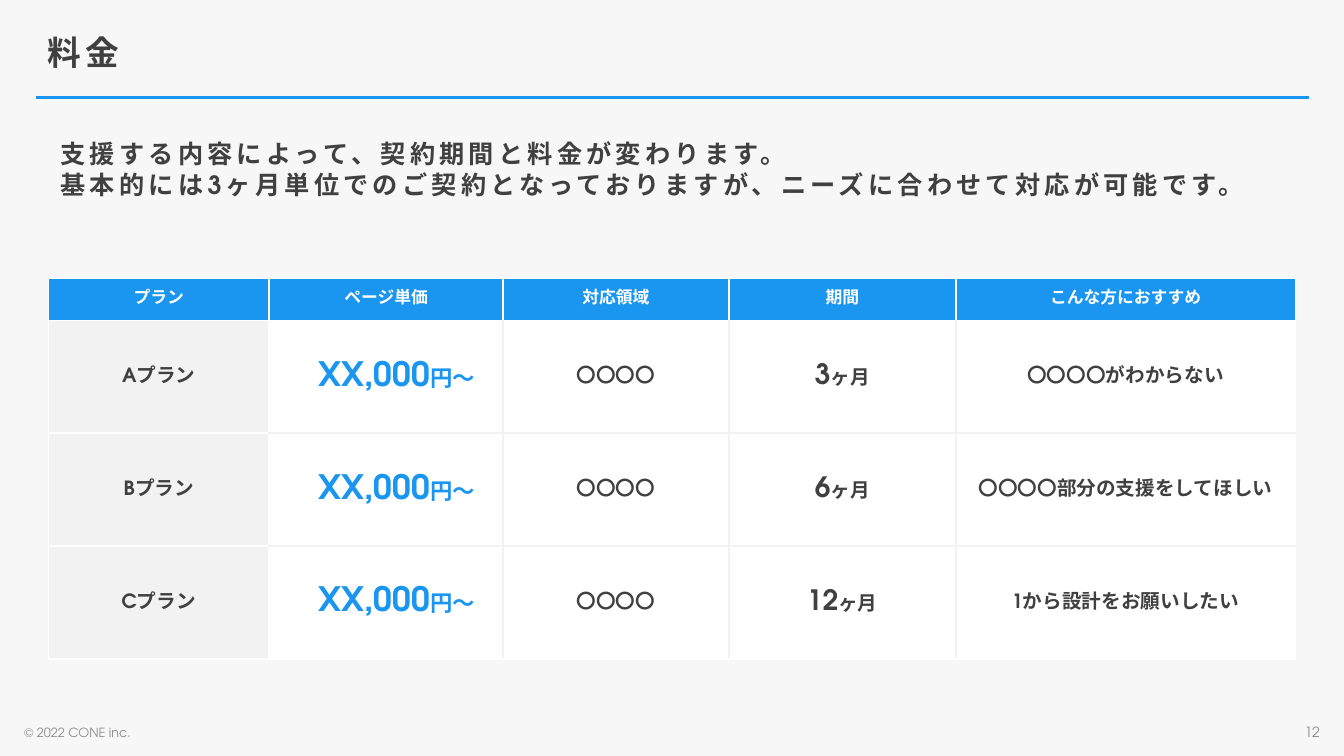
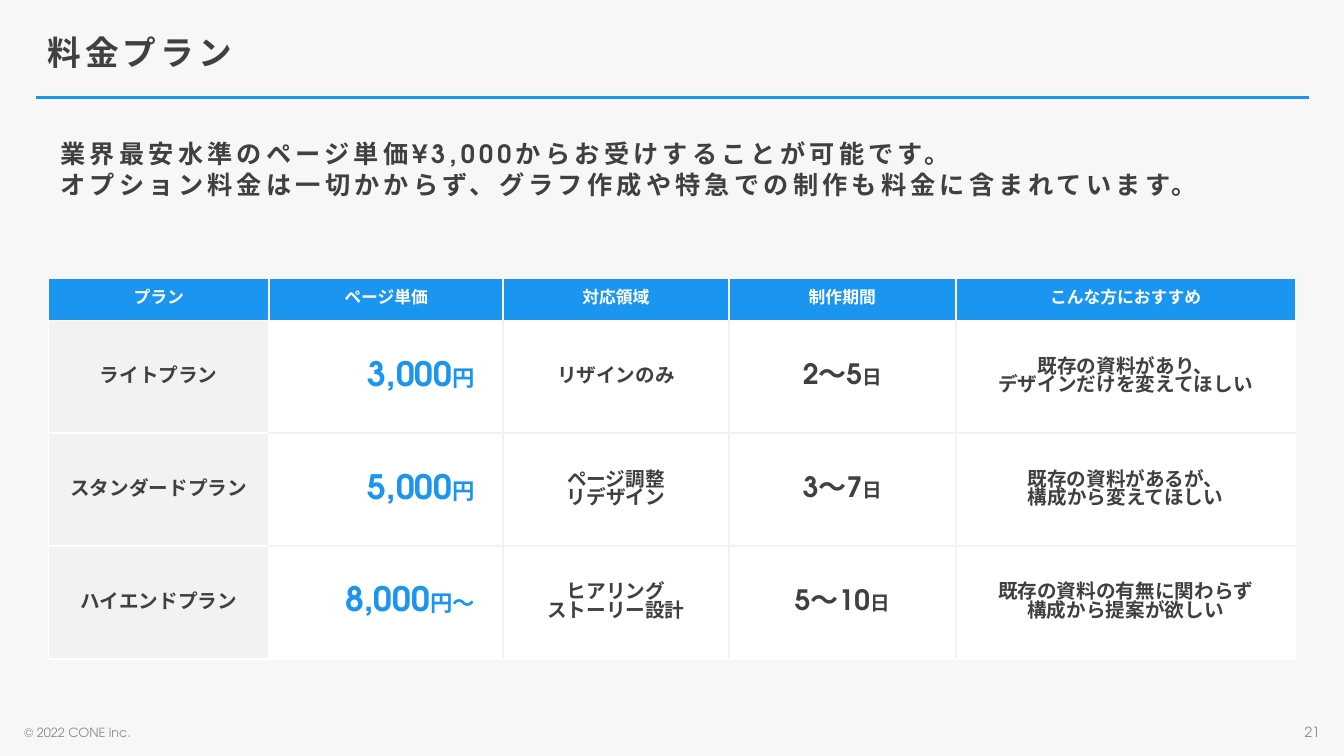
from lxml.etree import SubElement
from pptx import Presentation
from pptx.dml.color import RGBColor
from pptx.enum.lang import MSO_LANGUAGE_ID
from pptx.enum.shapes import MSO_CONNECTOR
from pptx.enum.text import MSO_ANCHOR, MSO_AUTO_SIZE, PP_ALIGN
from pptx.oxml.ns import qn
from pptx.util import Inches, Pt

SLIDES = [
    {
        "title": "料金",
        "number": "12",
        "lead": ["支援する内容によって、契約期間と料金が変わります。",
                 "基本的には3ヶ月単位でのご契約となっておりますが、ニーズに合わせて対応が可能です。"],
        "header": ["プラン", "ページ単価", "対応領域", "期間", "こんな方におすすめ"],
        "plans": [
            ("Aプラン", ("XX,000", "円〜"), ["〇〇〇〇"], ("3", "ヶ月"), ["〇〇〇〇がわからない"]),
            ("Bプラン", ("XX,000", "円〜"), ["〇〇〇〇"], ("6", "ヶ月"), ["〇〇〇〇部分の支援をしてほしい"]),
            ("Cプラン", ("XX,000", "円〜"), ["〇〇〇〇"], ("12", "ヶ月"), ["1から設計をお願いしたい"]),
        ],
    },
    {
        "title": "料金プラン",
        "number": "21",
        "lead": ["業界最安水準のページ単価¥3,000からお受けすることが可能です。",
                 "オプション料金は一切かからず、グラフ作成や特急での制作も料金に含まれています。"],
        "header": ["プラン", "ページ単価", "対応領域", "制作期間", "こんな方におすすめ"],
        "plans": [
            ("ライトプラン", ("3,000", "円"), ["リザインのみ"], ("2〜5", "日"),
             ["既存の資料があり、", "デザインだけを変えてほしい"]),
            ("スタンダードプラン", ("5,000", "円"), ["ページ調整", "リデザイン"], ("3〜7", "日"),
             ["既存の資料があるが、", "構成から変えてほしい"]),
            ("ハイエンドプラン", ("8,000", "円〜"), ["ヒアリング", "ストーリー設計"], ("5〜10", "日"),
             ["既存の資料の有無に関わらず", "構成から提案が欲しい"]),
        ],
    },
]
COPYRIGHT = "© 2022 CONE inc."

FONT = "TeX Gyre Adventor"
BLUE = RGBColor(0x1A, 0x96, 0xF0)
DARK = RGBColor(0x40, 0x40, 0x40)
GRAY = RGBColor(0x8C, 0x8C, 0x8C)
PALE = RGBColor(0xF2, 0xF2, 0xF2)
WHITE = RGBColor(0xFF, 0xFF, 0xFF)
BACKGROUND = RGBColor(0xF7, 0xF7, 0xF7)

COLUMN_WIDTHS = [2.19, 2.32, 2.24, 2.25, 3.37]
ROW_HEIGHTS = [0.42, 1.12, 1.12, 1.12]
BORDER_WIDTH = Pt(1.5)


def add_run(paragraph, text, size, color, bold=True, spacing=0):
    run = paragraph.add_run()
    run.text = text
    font = run.font
    font.name, font.size, font.bold = FONT, Pt(size), bold
    font.color.rgb = color
    font.language_id = MSO_LANGUAGE_ID.JAPANESE
    properties = run._r.get_or_add_rPr()
    SubElement(properties, qn("a:ea")).set("typeface", FONT)
    if spacing:
        properties.set("spc", str(spacing * 100))


def add_paragraphs(frame, paragraphs, alignment):
    for index, runs in enumerate(paragraphs):
        paragraph = frame.add_paragraph() if index else frame.paragraphs[0]
        paragraph.alignment = alignment
        for text, size, color in runs:
            add_run(paragraph, text, size, color)


def place(shape, left, top, width, height):
    shape.left, shape.top = Inches(left), Inches(top)
    shape.width, shape.height = Inches(width), Inches(height)


def prepare_frame(shape, anchor, top_inset):
    frame = shape.text_frame
    frame.auto_size = MSO_AUTO_SIZE.NONE
    frame.word_wrap = True
    frame.vertical_anchor = anchor
    frame.margin_top = Inches(top_inset)
    return frame


def add_title(slide, text):
    title = slide.shapes.title
    place(title, 0.37, 0.21, 12.52, 0.63)
    paragraph = prepare_frame(title, MSO_ANCHOR.MIDDLE, 0.08).paragraphs[0]
    paragraph.alignment = PP_ALIGN.LEFT
    paragraph.line_spacing = 0.9
    add_run(paragraph, text, 24, DARK, spacing=3)
    rule = slide.shapes.add_connector(
        MSO_CONNECTOR.STRAIGHT, Inches(0.36), Inches(0.97), Inches(12.98), Inches(0.97))
    rule.line.color.rgb = BLUE
    rule.line.width = Pt(2)
    SubElement(rule._element.spPr, qn("a:effectLst"))


def add_lead(slide, lines):
    body = slide.placeholders[1]
    place(body, 0.5, 1.27, 12.33, 0.91)
    frame = prepare_frame(body, MSO_ANCHOR.TOP, 0.16)
    for index, line in enumerate(lines):
        paragraph = frame.add_paragraph() if index else frame.paragraphs[0]
        properties = paragraph._p.get_or_add_pPr()
        properties.set("marL", "0")
        properties.set("indent", "0")
        SubElement(properties, qn("a:buNone"))
        paragraph.line_spacing = 0.8
        paragraph.space_before = Pt(4.8 if index else 0)
        add_run(paragraph, line, 18, DARK, spacing=3)


def add_footer(slide, number):
    for text, left, size, alignment in [(COPYRIGHT, 0.14, 9, PP_ALIGN.LEFT),
                                        (number, 10.19, 10, PP_ALIGN.RIGHT)]:
        box = slide.shapes.add_textbox(Inches(left), Inches(7.13), Inches(3), Inches(0.27))
        paragraph = prepare_frame(box, MSO_ANCHOR.MIDDLE, 0.05).paragraphs[0]
        paragraph.alignment = alignment
        add_run(paragraph, text, size, GRAY, bold=False)


def seam_color(row, column):
    return WHITE if 0 in (row, column) else PALE


def set_borders(cell, row, column):
    last_row, last_column = len(ROW_HEIGHTS) - 1, len(COLUMN_WIDTHS) - 1
    sides = [("lnL", column > 0, seam_color(row, column - 1)),
             ("lnR", column < last_column, seam_color(row, column)),
             ("lnT", row > 0, seam_color(row - 1, column)),
             ("lnB", row < last_row, seam_color(row, column))]
    properties = cell._tc.get_or_add_tcPr()
    inner_sides = [(tag, color) for tag, inner, color in sides if inner]
    for index, (tag, color) in enumerate(inner_sides):
        line = SubElement(properties, qn("a:" + tag))
        line.set("w", str(BORDER_WIDTH))
        fill = SubElement(line, qn("a:solidFill"))
        SubElement(fill, qn("a:srgbClr")).set("val", str(color))
        properties.insert(index, line)


def plan_row(name, price, scope, period, audience):
    return [
        [[(name, 14, DARK)]],
        [[(price[0], 24, BLUE), (price[1], 16, BLUE)]],
        [[(line, 14, DARK)] for line in scope],
        [[(period[0], 20, DARK), (period[1], 14, DARK)]],
        [[(line, 14, DARK)] for line in audience],
    ]


def add_price_table(slide, header, plans):
    rows = [[[[(label, 12, WHITE)]] for label in header]]
    rows += [plan_row(*plan) for plan in plans]
    table = slide.shapes.add_table(
        len(ROW_HEIGHTS), len(COLUMN_WIDTHS), Inches(0.48), Inches(2.76),
        Inches(sum(COLUMN_WIDTHS)), Inches(sum(ROW_HEIGHTS))).table
    table.horz_banding = False
    for column, width in zip(table.columns, COLUMN_WIDTHS):
        column.width = Inches(width)
    for row, height in zip(table.rows, ROW_HEIGHTS):
        row.height = Inches(height)
    for row, contents in enumerate(rows):
        for column, paragraphs in enumerate(contents):
            cell = table.cell(row, column)
            is_price = row > 0 and column == 1
            cell.vertical_anchor = MSO_ANCHOR.MIDDLE
            if is_price:
                cell.margin_right = Inches(0.28)
            cell.fill.solid()
            cell.fill.fore_color.rgb = BLUE if row == 0 else PALE if column == 0 else WHITE
            set_borders(cell, row, column)
            add_paragraphs(cell.text_frame, paragraphs,
                           PP_ALIGN.RIGHT if is_price else PP_ALIGN.CENTER)


def main():
    presentation = Presentation()
    presentation.slide_width, presentation.slide_height = Inches(13.33), Inches(7.5)
    background = presentation.slide_master.background.fill
    background.solid()
    background.fore_color.rgb = BACKGROUND
    for content in SLIDES:
        slide = presentation.slides.add_slide(presentation.slide_layouts[1])
        add_title(slide, content["title"])
        add_lead(slide, content["lead"])
        add_price_table(slide, content["header"], content["plans"])
        add_footer(slide, content["number"])
    presentation.save("out.pptx")


if __name__ == "__main__":
    main()
